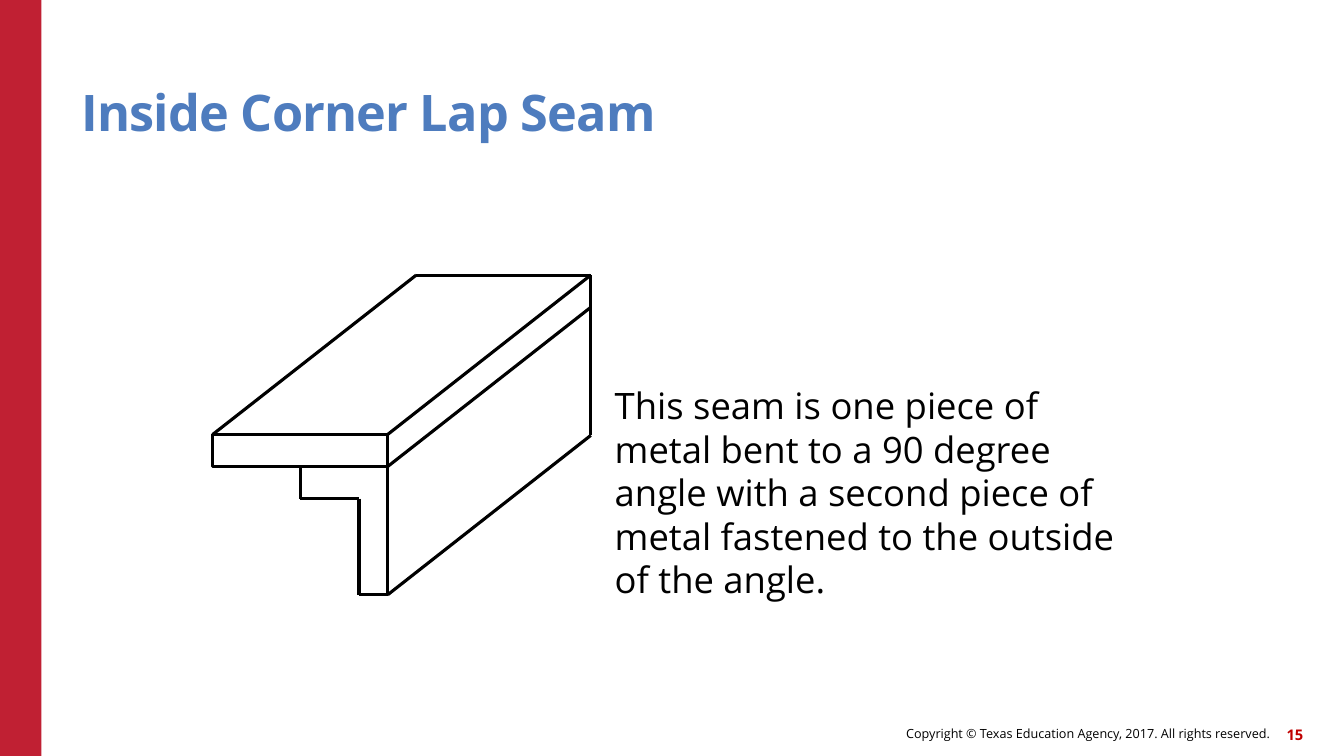
from pptx import Presentation
from pptx.dml.color import RGBColor
from pptx.enum.shapes import MSO_CONNECTOR, MSO_SHAPE
from pptx.enum.text import MSO_ANCHOR, PP_ALIGN
from pptx.util import Pt
from lxml import etree

LINE = MSO_CONNECTOR.STRAIGHT
RECT = MSO_SHAPE.RECTANGLE
TOP, MIDDLE, BOTTOM = MSO_ANCHOR.TOP, MSO_ANCHOR.MIDDLE, MSO_ANCHOR.BOTTOM
LEFT, RIGHT = PP_ALIGN.LEFT, PP_ALIGN.RIGHT
A = "http://schemas.openxmlformats.org/drawingml/2006/main"
COLORS = {"band": "C02033", "title": "4E7CBE", "ink": "000000", "number": "C00000"}


def rgb(name):
    return RGBColor.from_string(COLORS[name])


def add_text(s, box, text, size, color, bold=False, align=LEFT, anchor=TOP, inset=(0, 0)):
    tf = s.shapes.add_textbox(*[Pt(v) for v in box]).text_frame
    tf.word_wrap = True
    tf.vertical_anchor = anchor
    tf.margin_left = tf.margin_right = Pt(inset[0])
    tf.margin_top = tf.margin_bottom = Pt(inset[1])
    p = tf.paragraphs[0]
    p.alignment = align
    r = p.add_run()
    r.text = text
    r.font.name = "Open Sans"
    r.font.size = Pt(size)
    r.font.bold = bold
    r.font.color.rgb = rgb(color)
    return p


prs = Presentation()
prs.slide_width, prs.slide_height = Pt(960), Pt(540)
s = prs.slides.add_slide(prs.slide_layouts[6])

band = s.shapes.add_shape(RECT, 0, 0, Pt(29.5), Pt(540))
band.shadow.inherit = False
band.fill.solid()
band.fill.fore_color.rgb = rgb("band")
band.line.fill.background()

add_text(s, (442, 512.6, 465, 23), "Copyright © Texas Education Agency, 2017. All rights reserved.",
         9, "ink", align=RIGHT, anchor=MIDDLE)
add_text(s, (900.7, 513.4, 30.2, 23), "15", 10.5, "number", True, RIGHT, MIDDLE)
p = add_text(s, (58.3, 32.4, 793.4, 69.1), "Inside Corner Lap Seam", 36, "title", True, anchor=BOTTOM)
p.line_spacing = 0.9
p.runs[0].font._element.set("spc", "-60")

plate_left, angle_left, web_left, corner, back_left, back_right = 152, 214.5, 256.5, 277, 297.3, 422
plate_top, plate_bottom, flange_bottom, angle_bottom = 310.3, 333.2, 356.2, 424.8
back_top, back_seam, back_bottom = 196.5, 219.5, 311

plate = s.shapes.add_shape(RECT, Pt(plate_left), Pt(plate_top),
                           Pt(corner - plate_left), Pt(plate_bottom - plate_top))
plate.shadow.inherit = False
plate.fill.background()
plate.line.color.rgb = rgb("ink")
plate.line.width = Pt(2.25)

edges = [
    (angle_left, plate_bottom, angle_left, flange_bottom),
    (angle_left, flange_bottom, web_left, flange_bottom),
    (web_left, flange_bottom, web_left, angle_bottom),
    (angle_left, plate_bottom, corner, plate_bottom),
    (corner, plate_bottom, corner, angle_bottom),
    (web_left, angle_bottom, corner, angle_bottom),
    (plate_left, plate_top, back_left, back_top),
    (corner, plate_top, back_right, back_top),
    (corner, plate_bottom, back_right, back_seam),
    (corner, angle_bottom, back_right, back_bottom),
    (back_left, back_top, back_right, back_top),
    (back_right, back_top, back_right, back_bottom),
]
for edge in edges:
    c = s.shapes.add_connector(LINE, *[Pt(v) for v in edge])
    c.line.color.rgb = rgb("ink")
    c.line.width = Pt(2.25)
    etree.SubElement(c._element.spPr, f"{{{A}}}effectLst")

add_text(s, (432, 270, 378, 165),
         "This seam is one piece of metal bent to a 90 degree angle with a second piece of metal "
         "fastened to the outside of the angle.", 26, "ink", inset=(7.2, 3.6))

prs.save("out.pptx")
